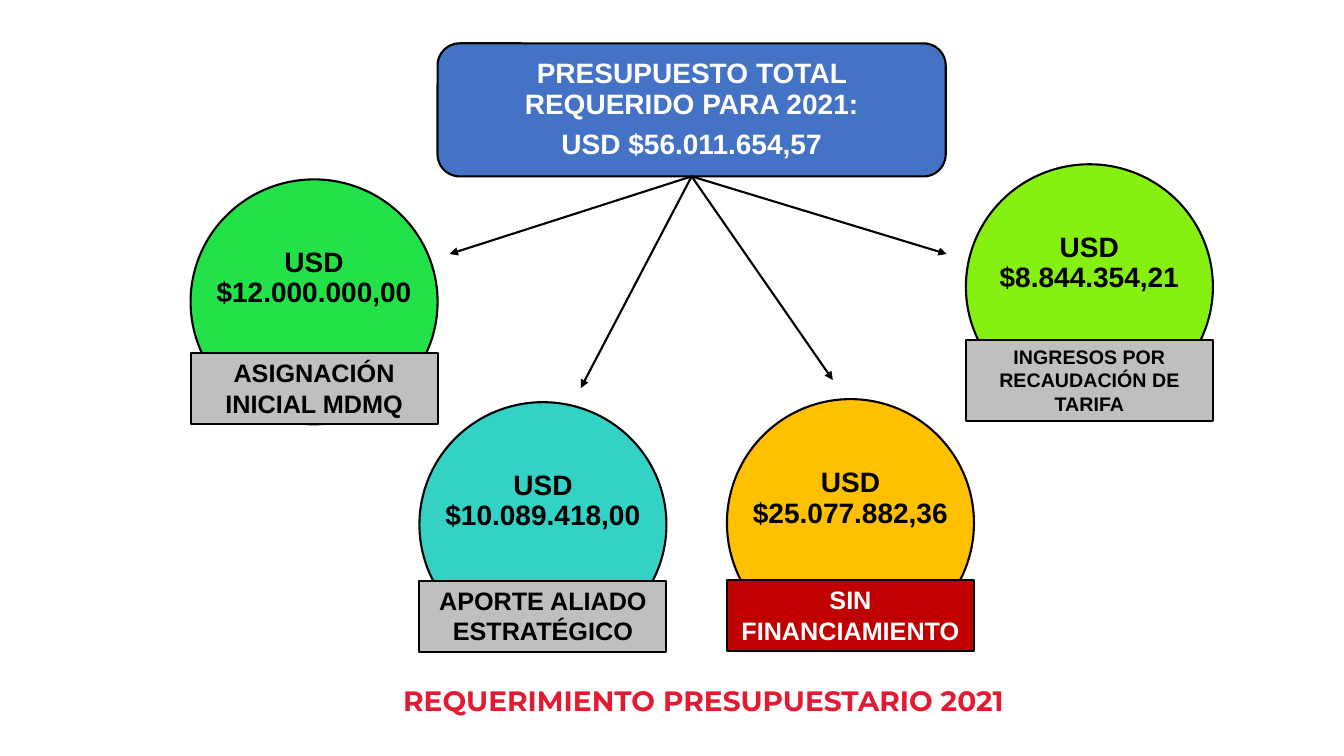
"""Build the 2021 budget requirement slide."""
from pptx import Presentation
from pptx.dml.color import RGBColor
from pptx.enum.shapes import MSO_CONNECTOR, MSO_SHAPE
from pptx.enum.text import MSO_ANCHOR, PP_ALIGN
from pptx.oxml.ns import qn
from pptx.util import Inches, Pt
from lxml.etree import SubElement

BLACK = RGBColor(0x00, 0x00, 0x00)
WHITE = RGBColor(0xFF, 0xFF, 0xFF)
BLUE = RGBColor(0x44, 0x72, 0xC4)
GREEN = RGBColor(0x23, 0xE1, 0x48)
LIME = RGBColor(0x86, 0xF0, 0x11)
TEAL = RGBColor(0x33, 0xD2, 0xC5)
AMBER = RGBColor(0xFF, 0xC0, 0x00)
GRAY = RGBColor(0xBF, 0xBF, 0xBF)
DARK_RED = RGBColor(0xC0, 0x00, 0x00)
RED = RGBColor(0xE4, 0x1A, 0x33)


def set_text(sp, text, size, color, font="Arial", align=PP_ALIGN.CENTER):
    tf = sp.text_frame
    tf.text = text
    for p in tf.paragraphs:
        p.alignment = align
        p.font.name = font
        p.font.size = Pt(size)
        p.font.bold = True
        p.font.color.rgb = color
    return tf


def add_outlined(kind, left, top, width, height, fill):
    sp = s.shapes.add_shape(kind, Inches(left), Inches(top), Inches(width), Inches(height))
    sp.shadow.inherit = False
    sp.fill.solid()
    sp.fill.fore_color.rgb = fill
    sp.line.color.rgb = BLACK
    sp.line.width = Pt(1.5)
    return sp


prs = Presentation()
prs.slide_width, prs.slide_height = Inches(13.33), Inches(7.5)
s = prs.slides.add_slide(prs.slide_layouts[6])

header = add_outlined(MSO_SHAPE.ROUNDED_RECTANGLE, 4.34, 0.43, 5.04, 1.32, BLUE)
tf = set_text(header, "PRESUPUESTO TOTAL REQUERIDO PARA 2021:\nUSD $56.011.654,57", 20, WHITE)
tf.margin_left = tf.margin_right = tf.margin_top = tf.margin_bottom = Inches(0.25)
tf.vertical_anchor = MSO_ANCHOR.MIDDLE
for p in tf.paragraphs:
    p.line_spacing = 0.9
    p.space_after = Pt(7)

title = s.shapes.add_textbox(Inches(3.9), Inches(6.73), Inches(7.21), Inches(0.44))
tf = set_text(title, "REQUERIMIENTO PRESUPUESTARIO 2021", 20, RED, "Montserrat", PP_ALIGN.LEFT)
tf.word_wrap = True

WIDTH = 2.45
sources = [
    (1.89, 1.78, 2.43, GREEN, "$12.000.000,00",
     3.5, 0.71, GRAY, "ASIGNACIÓN INICIAL MDMQ", 18, BLACK),
    (9.58, 1.63, 2.43, LIME, "$8.844.354,21",
     3.37, 0.81, GRAY, "INGRESOS POR RECAUDACIÓN DE TARIFA", 14, BLACK),
    (4.16, 3.99, 2.43, TEAL, "$10.089.418,00",
     5.76, 0.71, GRAY, "APORTE ALIADO ESTRATÉGICO", 18, BLACK),
    (7.21, 3.96, 2.46, AMBER, "$25.077.882,36",
     5.75, 0.71, DARK_RED, "SIN FINANCIAMIENTO", 18, WHITE),
]
for (left, top, height, fill, amount,
     label_top, label_height, label_fill, label, size, color) in sources:
    circle = add_outlined(MSO_SHAPE.OVAL, left, top, WIDTH, height, fill)
    tf = set_text(circle, f"USD\v{amount}", 20, BLACK)
    tf.word_wrap = False
    tf.vertical_anchor = MSO_ANCHOR.TOP
    tf.margin_top = Inches(0.33)
    tf.paragraphs[0].line_spacing = 0.9

    box = add_outlined(MSO_SHAPE.RECTANGLE, left, label_top, WIDTH, label_height, label_fill)
    tf = set_text(box, label, size, color)
    tf.word_wrap = True
    tf.vertical_anchor = MSO_ANCHOR.TOP

for x, y in [(4.46, 2.52), (5.76, 3.85), (8.26, 3.77), (9.39, 2.52)]:
    arrow = s.shapes.add_connector(
        MSO_CONNECTOR.STRAIGHT, Inches(6.86), Inches(1.75), Inches(x), Inches(y))
    arrow.begin_connect(header, 2)
    arrow.line.color.rgb = BLACK
    arrow.line.width = Pt(1.5)
    SubElement(arrow.line._get_or_add_ln(), qn("a:tailEnd"), type="triangle")
    SubElement(arrow._element.spPr, qn("a:effectLst"))

prs.save("out.pptx")
